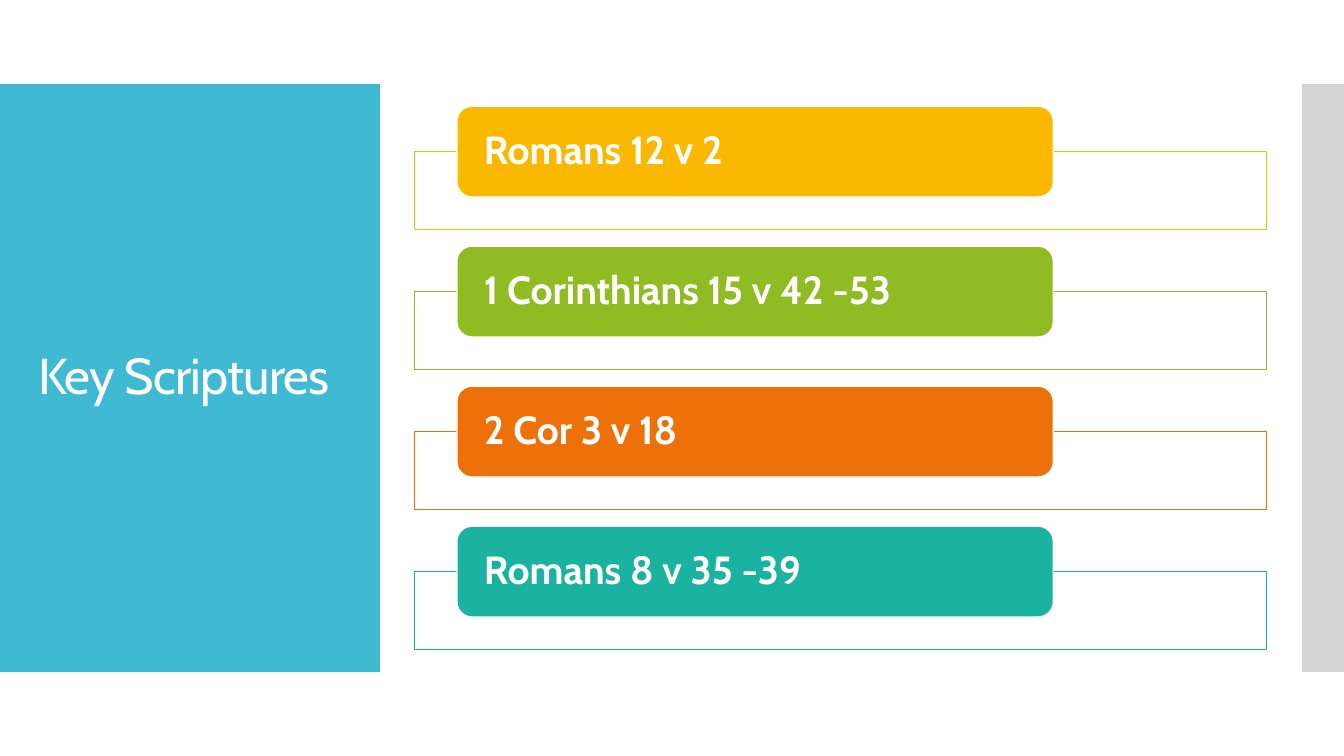
from pptx import Presentation
from pptx.dml.color import RGBColor
from pptx.enum import shapes, text
from pptx.util import Pt

TITLE = "Key Scriptures"
SCRIPTURES = [
    ("Romans 12 v 2", "FAB900"),
    ("1 Corinthians 15 v 42 -53", "90BB23"),
    ("2 Cor 3 v 18", "EE7008"),
    ("Romans 8 v 35 -39", "1AB39F"),
]
FONT, WHITE, BLUE, GREY = "Cabin", "FFFFFF", "40BAD2", "D5D5D5"
BAND_TOP, BAND_HEIGHT = 60, 420
ROW_TOP, ROW_PITCH = 75.9, 100
FRAME_DROP = 32.5  # from the top of a card to the top of its frame


def rgb(value):
    return RGBColor.from_string(value)


def add_box(page, kind, left, top, width, height, fill, line=None):
    box = page.shapes.add_shape(kind, Pt(left), Pt(top), Pt(width), Pt(height))
    box.shadow.inherit = False
    box.fill.solid()
    box.fill.fore_color.rgb = rgb(fill)
    if line:
        box.line.color.rgb = rgb(line)
        box.line.width = Pt(0.85)
    else:
        box.line.fill.background()
    return box


def write(box, words, size, margin, bold=False):
    """Put one white, left-aligned, vertically centred line in the box."""
    frame = box.text_frame
    frame.word_wrap = True
    frame.vertical_anchor = text.MSO_ANCHOR.MIDDLE
    frame.margin_left = frame.margin_right = Pt(margin)
    frame.margin_top = frame.margin_bottom = 0
    para = frame.paragraphs[0]
    para.text = words
    para.alignment = text.PP_ALIGN.LEFT
    para.line_spacing = 0.9
    para.font.name = FONT
    para.font.size = Pt(size)
    para.font.bold = bold
    para.font.color.rgb = rgb(WHITE)
    return para


def main():
    deck = Presentation()
    deck.slide_width, deck.slide_height = Pt(960), Pt(540)
    page = deck.slides.add_slide(deck.slide_layouts[6])
    rect = shapes.MSO_SHAPE.RECTANGLE
    rounded = shapes.MSO_SHAPE.ROUNDED_RECTANGLE

    add_box(page, rect, 930, BAND_TOP, 30, BAND_HEIGHT, GREY)
    panel = add_box(page, rect, 0, BAND_TOP, 271.3, BAND_HEIGHT, BLUE)
    heading = write(panel, TITLE, 36, 27.4)
    heading.font._rPr.set("spc", "-60")

    for row, (words, color) in enumerate(SCRIPTURES):
        top = ROW_TOP + row * ROW_PITCH
        add_box(page, rect, 296, top + FRAME_DROP, 608.6, 55.4, WHITE, color)
        card = add_box(page, rounded, 326.4, top, 426, 64.8, color, WHITE)
        write(card, words, 28, 16.1, bold=True)

    deck.save("out.pptx")


if __name__ == "__main__":
    main()
